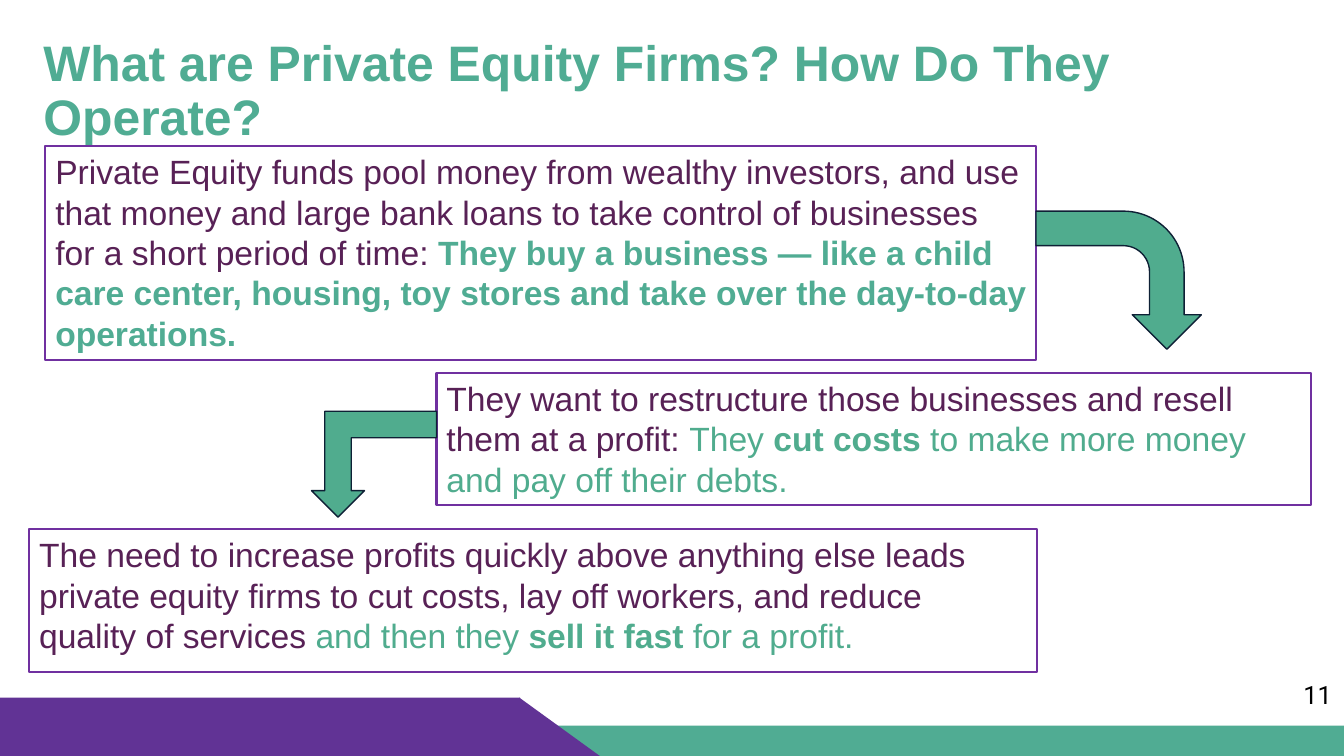
from pptx import Presentation
from pptx.dml.color import RGBColor
from pptx.enum import shapes, text
from pptx.util import Inches, Pt

GREEN, LEAF, PURPLE = "50AC93", "50AC8E", "613395"
PLUM, BORDER, NAVY = "582156", "7030A0", "0E2035"
KIND = shapes.MSO_SHAPE


def colour(value):
    return RGBColor.from_string(value)


def add_block(slide, kind, place, fill, line=None, rotation=0, adjustments=()):
    block = slide.shapes.add_shape(kind, *map(Inches, place))
    block.shadow.inherit = False
    block.rotation = rotation
    block.fill.solid()
    block.fill.fore_color.rgb = colour(fill)
    if line:
        block.line.color.rgb = colour(line)
        block.line.width = Pt(1)
    else:
        block.line.fill.background()
    for index, value in enumerate(adjustments):
        block.adjustments[index] = value


def write(frame, runs, size, font="Arial", spacing=1.0):
    """Fill a frame with one paragraph of (words, colour, bold) runs."""
    layout = {"word_wrap": True, "auto_size": text.MSO_AUTO_SIZE.NONE,
              "vertical_anchor": text.MSO_ANCHOR.TOP}
    for name, value in layout.items():
        setattr(frame, name, value)
    paragraph = frame.paragraphs[0]
    paragraph.alignment = text.PP_ALIGN.LEFT
    paragraph.line_spacing = spacing
    for words, ink, bold in runs:
        run = paragraph.add_run()
        run.text = words
        for name, value in {"name": font, "size": Pt(size), "bold": bold}.items():
            setattr(run.font, name, value)
        run.font.color.rgb = colour(ink)


def add_title(slide, words):
    title = slide.shapes.title
    place = {"left": 0.33, "top": 0.33, "width": 12.67, "height": 1.25}
    for name, value in place.items():
        setattr(title, name, Inches(value))
    write(title.text_frame, [(words, GREEN, True)], 35.6, spacing=0.9)


def add_text(slide, place, runs, size=24, font="Arial", border=None):
    box = slide.shapes.add_textbox(*map(Inches, place))
    if border:
        box.line.color.rgb = colour(border)
        box.line.width = Pt(1.5)
    write(box.text_frame, runs, size, font)


def add_footer(slide):
    add_block(slide, KIND.RECTANGLE, (0, 7.2, 13.33, 0.3), GREEN)
    add_block(slide, KIND.RECTANGLE, (0, 6.92, 5.16, 0.58), PURPLE)
    add_block(slide, KIND.RIGHT_TRIANGLE, (5.15, 6.92, 0.8, 0.58), PURPLE)


def main():
    deck = Presentation()
    deck.slide_width, deck.slide_height = Inches(13.33), Inches(7.5)
    slide = deck.slides.add_slide(deck.slide_layouts[5])

    add_footer(slide)
    add_title(slide, "What are Private Equity Firms? How Do They Operate?")

    steps = [
        ((0.29, 5.25, 10, 1.42), [
            ("The need to increase profits quickly above anything else leads "
             "private equity firms to cut costs, lay off workers, and reduce "
             "quality of services ", PLUM, False),
            ("and then they ", LEAF, False),
            ("sell it fast", LEAF, True),
            (" for a profit.", LEAF, False)]),
        ((0.45, 1.45, 9.83, 2.12), [
            ("Private Equity funds pool money from wealthy investors, and use "
             "that money and large bank loans to take control of businesses "
             "for a short period of time: ", PLUM, False),
            ("They buy a business — like a child care center, housing, toy "
             "stores and take over the day-to-day operations.", GREEN, True)]),
        ((4.33, 3.7, 8.67, 1.31), [
            ("They want to restructure those businesses and resell them at a "
             "profit: ", PLUM, False),
            ("They ", LEAF, False),
            ("cut costs", LEAF, True),
            (" to make more money and pay off their debts.", LEAF, False)]),
    ]
    for place, runs in steps:
        add_text(slide, place, runs, border=BORDER)
    add_text(slide, (12.83, 6.69, 0.5, 0.4), [("11", "000000", False)], 18, "Roboto")

    add_block(slide, KIND.BENT_ARROW, (10.41, 1.96, 1.37, 1.64), LEAF, NAVY,
              90, (0.25, 0.25, 0.25, 0.44))
    add_block(slide, KIND.BENT_UP_ARROW, (3.09, 4.08, 1.24, 1.05), LEAF, NAVY,
              180, (0.25, 0.25, 0.25))
    deck.save("out.pptx")


if __name__ == "__main__":
    main()
